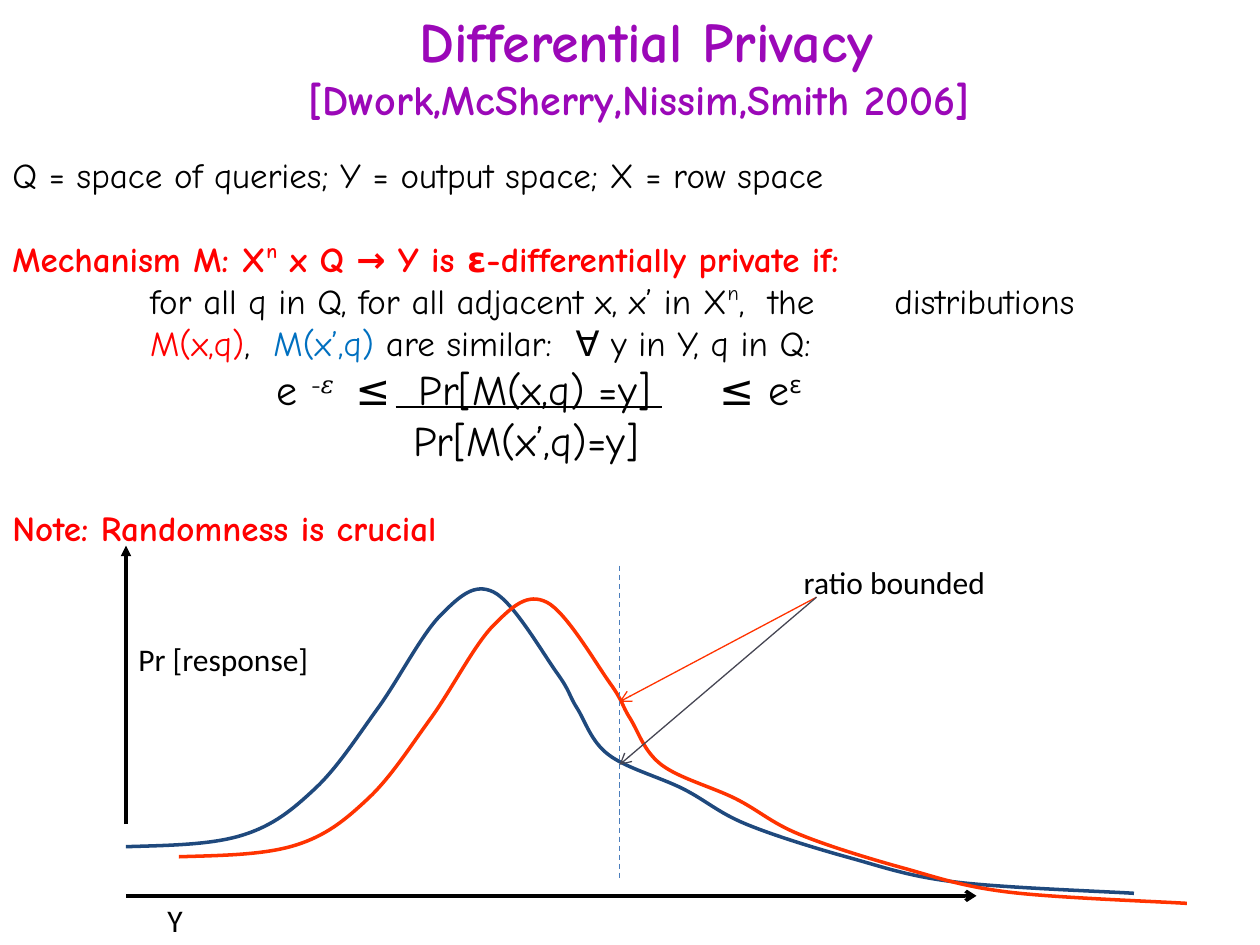
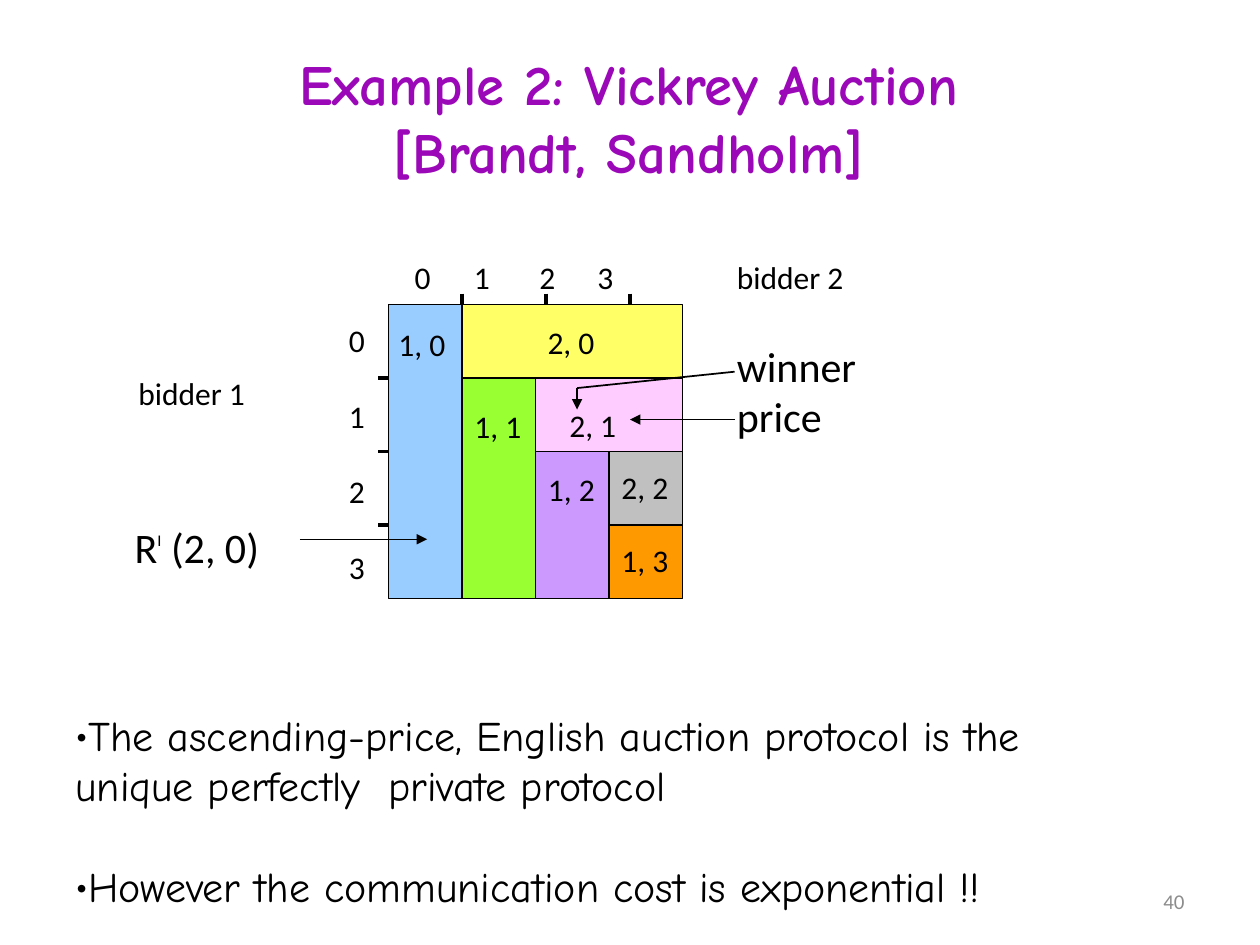
from dataclasses import dataclass
from typing import NamedTuple

from lxml import etree
from pptx import Presentation
from pptx import util as u
from pptx.dml.color import RGBColor
from pptx.enum import dml, shapes, text
from pptx.oxml import ns

Point = tuple[float, float]


@dataclass(frozen=True)
class Theme:
    title: str = "9B08B8"
    ink: str = "000000"
    red: str = "FF0000"
    blue: str = "0070C0"
    curve_x: str = "1F497D"
    curve_neighbour: str = "FF3300"
    slate: str = "464653"
    guide: str = "4B7EBC"
    footer: str = "8C8C8C"
    comic: str = "Comic Neue"
    plain: str = "Calibri"
    math: str = "Cambria"
    title_size: float = 32
    large: float = 24
    body: float = 20
    label: float = 18
    small: float = 16
    number: float = 12


THEME = Theme()


class Run(NamedTuple):
    words: str
    size: float = THEME.label
    color: str = THEME.ink
    font: str = THEME.plain
    bold: bool = False
    raised: int = 0  # superscript height in percent


class Para(NamedTuple):
    runs: list[Run]
    before: float = 0
    tabs: tuple[float, ...] = ()
    bullet: str = ""
    align: text.PP_ALIGN = text.PP_ALIGN.LEFT


class Line(NamedTuple):
    start: Point
    end: Point
    width: float = 0.75
    color: str = THEME.ink
    head: str = ""
    dashed: bool = False


class Region(NamedTuple):
    """A block of the auction grid; its place and size count grid cells."""
    col: int
    row: int
    cols: int
    rows: int
    fill: str
    outcome: str
    label_dx: float
    label_dy: float


# ---- drawing helpers ----
def rgb(color: str) -> RGBColor:
    return RGBColor.from_string(color)


def add_xml(parent, tag: str, **attributes: str):
    return etree.SubElement(parent, ns.qn(tag), attributes)


def add_run(paragraph, run: Run) -> None:
    for i, part in enumerate(run.words.split("\n")):
        if i:
            paragraph.add_line_break()
        if not part:
            continue
        piece = paragraph.add_run()
        piece.text = part
        font = piece.font
        font.name, font.size, font.bold = run.font, u.Pt(run.size), run.bold
        font.color.rgb = rgb(run.color)
        if run.raised:
            piece._r.get_or_add_rPr().set("baseline", str(run.raised * 1000))


def add_text(slide, left: float, top: float, width: float, height: float,
             paras: list[Para], middle: bool = False) -> None:
    box = slide.shapes.add_textbox(*map(u.Inches, (left, top, width, height)))
    frame = box.text_frame
    frame.word_wrap = True
    if middle:
        frame.vertical_anchor = text.MSO_ANCHOR.MIDDLE
    for i, para in enumerate(paras):
        paragraph = frame.add_paragraph() if i else frame.paragraphs[0]
        props = paragraph._p.get_or_add_pPr()
        if para.bullet:
            add_xml(props, "a:buFont", typeface=para.runs[0].font)
            add_xml(props, "a:buChar", char=para.bullet)
        if para.tabs:
            stops = add_xml(props, "a:tabLst")
            for stop in para.tabs:
                add_xml(stops, "a:tab", pos=str(u.Inches(stop)), algn="l")
        paragraph.alignment = para.align
        if para.before:
            paragraph.space_before = u.Pt(para.before)
        for run in para.runs:
            add_run(paragraph, run)


def add_label(slide, left: float, top: float, width: float, words: str) -> None:
    add_text(slide, left, top, width, 0.4, [Para([Run(words)])])


def add_title(slide, left: float, top: float, width: float, height: float,
              *parts: tuple[str, float]) -> None:
    runs = [Run(words, size, THEME.title, THEME.comic, True) for words, size in parts]
    add_text(slide, left, top, width, height,
             [Para(runs, align=text.PP_ALIGN.CENTER)], middle=True)


def add_line(slide, line: Line) -> None:
    connector = slide.shapes.add_connector(
        shapes.MSO_CONNECTOR.STRAIGHT, *map(u.Inches, line.start + line.end))
    connector.line.width = u.Pt(line.width)
    connector.line.color.rgb = rgb(line.color)
    if line.dashed:
        connector.line.dash_style = dml.MSO_LINE.DASH
    if line.head:
        add_xml(connector.line._get_or_add_ln(), "a:tailEnd", type=line.head)
    add_xml(connector._element.spPr, "a:effectLst")


def bezier_points(knots: list[Point], lead_in: Point) -> list[Point]:
    """Two handles and an end point for each span of a Catmull-Rom curve."""
    padded = [lead_in, *knots, knots[-1]]
    points = []
    for a, b, c, d in zip(padded, padded[1:], padded[2:], padded[3:]):
        points += [(b[0] + (c[0] - a[0]) / 6, b[1] + (c[1] - a[1]) / 6),
                   (c[0] - (d[0] - b[0]) / 6, c[1] - (d[1] - b[1]) / 6), c]
    return points


def add_curve(slide, knots: list[Point], lead_in: Point, color: str,
              dx: float = 0, dy: float = 0) -> None:
    start, *rest = [(u.Inches(x + dx), u.Inches(y + dy))
                    for x, y in [knots[0], *bezier_points(knots, lead_in)]]
    builder = slide.shapes.build_freeform(*start)
    builder.add_line_segments(rest, close=False)
    curve = builder.convert_to_shape()
    # Turn every three straight segments into one cubic segment
    segments = list(curve._element.iter(ns.qn("a:lnTo")))
    outline = segments[0].getparent()
    for i in range(0, len(segments), 3):
        cubic = add_xml(outline, "a:cubicBezTo")
        for segment in segments[i:i + 3]:
            cubic.append(segment[0])
            outline.remove(segment)
    curve.shadow.inherit = False
    curve.fill.background()
    curve.line.color.rgb = rgb(color)
    curve.line.width = u.Pt(2)


# ---- slide 1: definition and response densities ----
DENSITY = [(1, 6.72), (1.92, 6.63), (2.5, 6.26), (3, 5.62), (3.5, 4.88),
           (3.92, 4.7), (4.42, 5.34), (4.58, 5.62), (4.83, 5.99), (5.42, 6.26),
           (5.92, 6.54), (6.75, 6.81), (7.58, 7), (9, 7.09)]
DENSITY_LEAD_IN = (-0.06, 6.69)


def comic(words: str, color: str = THEME.ink, size: float = THEME.body,
          bold: bool = False, raised: int = 0) -> Run:
    return Run(words, size, color, THEME.comic, bold, raised)


def strong(words: str, raised: int = 0) -> Run:
    return comic(words, THEME.red, bold=True, raised=raised)


def formula(words: str, raised: int = 0) -> Run:
    return comic(words, size=THEME.large, raised=raised)


def build_privacy(slide) -> None:
    add_title(slide, 0.67, 0, 8.92, 1.03, ("Differential Privacy\n", THEME.title_size),
              ("[Dwork,McSherry,Nissim,Smith 2006] ", THEME.large))

    # Axes and the two densities
    add_label(slide, 1.23, 7.1, 0.4, "Y")
    add_line(slide, Line((1, 6.54), (1, 4.33), 2, head="triangle"))
    add_curve(slide, DENSITY, DENSITY_LEAD_IN, THEME.curve_x)
    add_curve(slide, DENSITY, DENSITY_LEAD_IN, THEME.curve_neighbour, 0.42, 0.08)
    add_label(slide, 1, 5.03, 1.75, "Pr [response]")
    add_line(slide, Line((1, 7.11), (7.75, 7.11), 2, head="arrow"))

    # Bounded ratio at one output
    output_x, callout = 59 / 12, (6.48, 4.74)
    add_line(slide, Line((output_x, 4.49), (output_x, 6.99), color=THEME.guide, dashed=True))
    for y, color in ((5.57, THEME.curve_neighbour), (6.07, THEME.slate)):
        add_line(slide, Line(callout, (output_x, y), color=color, head="arrow"))
    add_label(slide, 6.28, 4.42, 1.78, "ratio bounded")

    # Definition
    add_text(slide, 0, 1.17, 10, 3.26, [
        Para([comic("Q = space of queries; Y = output space; X = row space")]),
        Para([strong("Mechanism M: X"), strong("n", 40),
              strong(" x Q → Y is ε-differentially private if:")], before=24),
        Para([comic("\t for all q in Q, for all adjacent x, x’ in X"),
              comic("n", raised=40), comic(",  the \tdistributions")], tabs=(1, 7)),
        Para([comic("\t "), comic("M(x,q)", THEME.red), comic(",  "),
              comic("M(x’,q) ", THEME.blue),
              comic("are similar:  ∀ y in Y, q in Q:")], tabs=(1,)),
        Para([comic("\t "), formula("e "), formula("-", 30),
              Run("𝜀 ", THEME.large, font=THEME.math, raised=30),
              formula(" ≤  Pr[M(x,q) =y]\t≤ e"), formula("ε", 30)], tabs=(2, 5.61)),
        Para([formula("\tPr[M(x’,q)=y]")], tabs=(3.18,)),
        Para([strong("Note: Randomness is crucial")], before=24),
    ])
    add_line(slide, Line((3.14, 3.23), (5.25, 3.23)))  # fraction bar


# ---- slide 2: auction grid ----
CELL = 7 / 12
GRID_LEFT, GRID_TOP = 37 / 12, 29 / 12
REGIONS = [
    Region(0, 0, 1, 4, "99CCFF", "1, 0", -0.02, 0.11),
    Region(1, 1, 1, 3, "99FF33", "1, 1", 0, 0.18),
    Region(1, 0, 3, 1, "FFFF66", "2, 0", 0.58, 0.1),
    Region(2, 1, 2, 1, "FFCCFF", "2, 1", 0.17, 0.17),
    Region(2, 2, 1, 2, "CC99FF", "1, 2", 0, 0.1),
    Region(3, 2, 1, 1, "C0C0C0", "2, 2", 0, 0.08),
    Region(3, 3, 1, 1, "FF9900", "1, 3", 0, 0.08),
]


def add_region(slide, region: Region) -> None:
    left, top = GRID_LEFT + region.col * CELL, GRID_TOP + region.row * CELL
    block = slide.shapes.add_shape(
        shapes.MSO_SHAPE.RECTANGLE,
        *map(u.Inches, (left, top, region.cols * CELL, region.rows * CELL)))
    block.shadow.inherit = False
    block.fill.solid()
    block.fill.fore_color.rgb = rgb(region.fill)
    block.line.color.rgb = rgb(THEME.ink)
    block.line.width = u.Pt(0.75)


def build_auction(slide) -> None:
    add_text(slide, 7.17, 6.95, 2.33, 0.4,
             [Para([Run("40", THEME.number, THEME.footer)], align=text.PP_ALIGN.RIGHT)],
             middle=True)
    add_title(slide, 0.22, 0.32, 9.54, 1.22,
              ("Example 2: Vickrey Auction\n[Brandt, Sandholm]", 32.4))

    # Regions and their outcomes
    for region in REGIONS:
        add_region(slide, region)
    for region in REGIONS:
        add_label(slide, GRID_LEFT + region.col * CELL + region.label_dx,
                  GRID_TOP + region.row * CELL + region.label_dy, 0.75, region.outcome)

    # Bids along both axes
    add_text(slide, GRID_LEFT, 2, 2.5, 0.4,
             [Para([Run("\t0\t1\t2\t3")], tabs=(0.11, 0.58, 1.1, 1.56))])
    add_text(slide, 2.67, 2.5, 0.33, 2.2,
             [Para([Run(str(bid))], before=21.6 if bid else 0) for bid in range(4)])
    for i in range(3):
        x, y = GRID_LEFT + CELL + i * 2 / 3, GRID_TOP + (i + 1) * CELL
        add_line(slide, Line((x, 2.33), (x, GRID_TOP), 2.25))
        add_line(slide, Line((3, y), (GRID_LEFT, y), 2.25))
    add_label(slide, 1, 2.92, 1.17, "bidder 1")
    add_label(slide, 5.75, 2, 1.42, "bidder 2")

    # Callouts
    add_text(slide, 5.75, 2.65, 1.47, 0.9,
             [Para([Run(words, THEME.large)]) for words in ("winner", "price")])
    add_text(slide, 0.97, 4.09, 1.55, 0.5, [Para([
        Run("R", THEME.large), Run("I", THEME.small, raised=60), Run(" (2, 0)", THEME.large)])])
    for pointer in (Line((5.83, 3.33), (5, 3.33), head="triangle"),
                    Line((5.83, 2.95), (4.58, 3.08), 1),
                    Line((4.58, 3.08), (4.58, 3.25), head="triangle"),
                    Line((2.38, 4.28), (3.39, 4.28), head="triangle")):
        add_line(slide, pointer)

    # Conclusions
    add_text(slide, 0.5, 5.58, 8.83, 1.72, [
        Para([formula("The ascending-price, English auction protocol is the  "
                      "unique perfectly  private protocol")], bullet="•"),
        Para([formula("However the communication cost is exponential !!")],
             before=29, bullet="•"),
    ])


def main() -> None:
    deck = Presentation()
    deck.slide_width, deck.slide_height = u.Inches(10), u.Inches(7.5)
    for build in (build_privacy, build_auction):
        build(deck.slides.add_slide(deck.slide_layouts[6]))
    deck.save("out.pptx")


if __name__ == "__main__":
    main()
